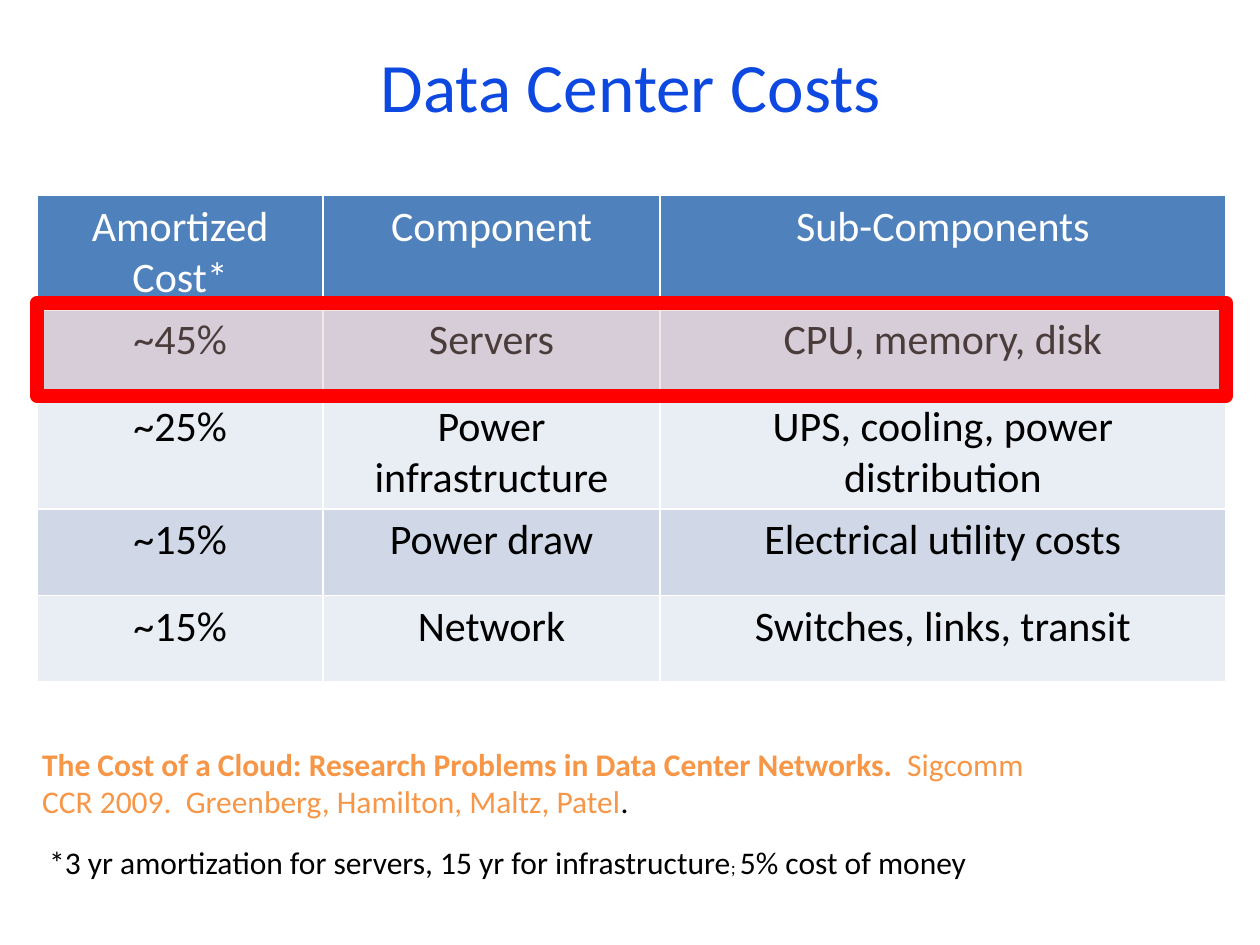
from lxml.etree import SubElement
from pptx import Presentation
from pptx.dml.color import RGBColor
from pptx.enum.shapes import MSO_SHAPE
from pptx.enum.text import MSO_ANCHOR, PP_ALIGN
from pptx.oxml import parse_xml
from pptx.oxml.ns import nsdecls, qn
from pptx.util import Pt

COLORS = {
    "title": "0D49E1", "header": "4F81BD", "odd": "D0D8E8", "even": "E9EDF4",
    "white": "FFFFFF", "black": "000000", "cite": "F79646",
    "frame": "FF0000", "tint": "E6B9B8",
}
ROWS = [
    ("Amortized Cost*", "Component", "Sub-Components"),
    ("~45%", "Servers", "CPU, memory, disk"),
    ("~25%", "Power infrastructure", "UPS, cooling, power distribution"),
    ("~15%", "Power draw", "Electrical utility costs"),
    ("~15%", "Network", "Switches, links, transit"),
]


class SlideBuilder:
    """Holds the style and the current slide, and adds each kind of element."""

    font = "Calibri"

    def __init__(self, prs):
        self.s = prs.slides.add_slide(prs.slide_layouts[6])

    def color(self, name):
        return RGBColor.from_string(COLORS[name])

    def run(self, p, text, size, color="black", bold=False):
        r = p.add_run()
        r.text = text
        r.font.name, r.font.size, r.font.bold = self.font, Pt(size), bold
        r.font.color.rgb = self.color(color)

    def text(self, box, runs, align=PP_ALIGN.LEFT, anchor=MSO_ANCHOR.TOP):
        tf = self.s.shapes.add_textbox(*map(Pt, box)).text_frame
        tf.word_wrap, tf.vertical_anchor = True, anchor
        p = tf.paragraphs[0]
        p.alignment = align
        for run in runs:
            self.run(p, *run)

    def borders(self, cell, bottom):
        tcPr = cell._tc.get_or_add_tcPr()
        for i, (side, width) in enumerate(zip("LRTB", (1, 1, 1, bottom))):
            tcPr.insert(i, parse_xml(
                f'<a:ln{side} {nsdecls("a")} w="{Pt(width)}"><a:solidFill>'
                f'<a:srgbClr val="{COLORS["white"]}"/></a:solidFill></a:ln{side}>'))

    def table(self, box, rows, widths, heights, size):
        table = self.s.shapes.add_table(len(rows), len(widths), *map(Pt, box)).table
        for col, width in zip(table.columns, widths):
            col.width = Pt(width)
        for i, (row, height) in enumerate(zip(rows, heights)):
            table.rows[i].height = Pt(height)
            fill = "header" if i == 0 else "odd" if i % 2 else "even"
            for j, text in enumerate(row):
                cell = table.cell(i, j)
                cell.fill.solid()
                cell.fill.fore_color.rgb = self.color(fill)
                self.borders(cell, 1 if i else 3)
                p = cell.text_frame.paragraphs[0]
                p.alignment = PP_ALIGN.CENTER
                self.run(p, text, size, "black" if i else "white")

    def highlight(self, box, fill, line, width, opacity):
        sp = self.s.shapes.add_shape(MSO_SHAPE.RECTANGLE, *map(Pt, box))
        sp.shadow.inherit = False
        sp.fill.solid()
        sp.fill.fore_color.rgb = self.color(fill)
        clr = sp._element.spPr.find(qn("a:solidFill"))[0]
        SubElement(clr, qn("a:alpha")).set("val", str(opacity * 1000))
        sp.line.color.rgb = self.color(line)
        sp.line.width = Pt(width)
        SubElement(sp.line._get_or_add_ln(), qn("a:round"))


def main():
    prs = Presentation()
    prs.slide_width, prs.slide_height = Pt(720), Pt(540)
    b = SlideBuilder(prs)
    b.text((27.4, 24.5, 666, 48.2), [("Data Center Costs", 39.6, "title")],
           PP_ALIGN.CENTER, MSO_ANCHOR.MIDDLE)
    b.table((21.2, 111.6, 679.4, 278.6), ROWS, (163.5, 192.4, 323.5),
            (57, 49.5, 57, 49.5, 49.5), 24)
    b.text((21, 478, 623.5, 51), [
        ("*3 yr amortization for servers, 15 yr for infrastructure", 18),
        ("; ", 10.5),
        ("5% cost of money", 18)])
    b.text((17, 422, 609, 51), [
        ("The Cost of a Cloud: Research Problems in Data Center Networks.  ",
         18, "cite", True),
        ("Sigcomm  CCR 2009.  Greenberg, Hamilton, Maltz, Patel", 18, "cite"),
        (".", 18)])
    b.highlight((21.2, 173, 679.4, 53.3), "tint", "frame", 8, 33)
    prs.save("out.pptx")


if __name__ == "__main__":
    main()
